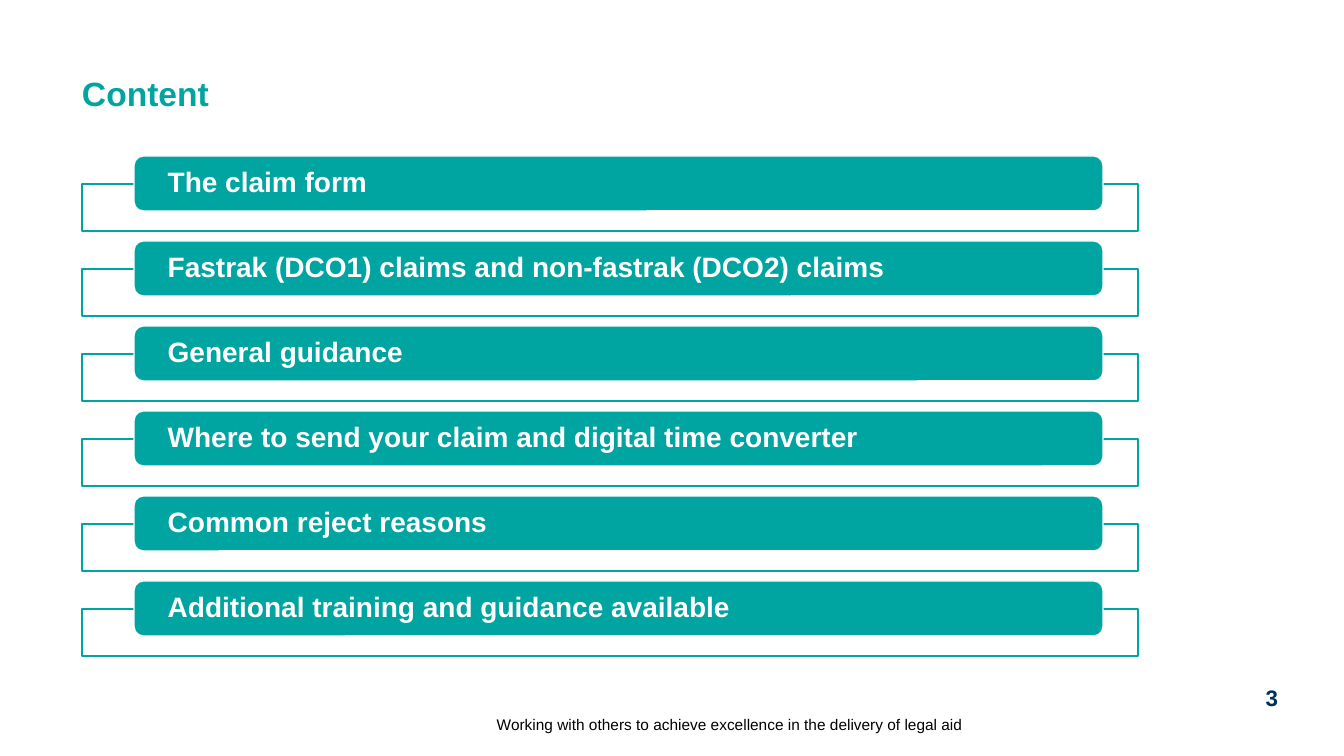
from dataclasses import dataclass

from lxml.etree import SubElement
from pptx import Presentation
from pptx.dml.color import RGBColor
from pptx.enum.shapes import MSO_SHAPE as Preset
from pptx.enum.text import MSO_ANCHOR as Anchor, MSO_AUTO_SIZE as AutoSize, PP_ALIGN as Align
from pptx.oxml.ns import qn
from pptx.shapes.autoshape import Shape
from pptx.slide import Slide
from pptx.util import Emu, Pt

EMU_PER_PX = 914400 / 100.8
TITLE_ONLY = 5


@dataclass(frozen=True)
class Theme:
    font: str = "Arial"
    teal: RGBColor = RGBColor(0x00, 0xA5, 0xA1)
    navy: RGBColor = RGBColor(0x00, 0x30, 0x57)
    white: RGBColor = RGBColor(0xFF, 0xFF, 0xFF)
    black: RGBColor = RGBColor(0x00, 0x00, 0x00)
    title_size: int = 24
    topic_size: int = 20
    number_size: int = 16
    footer_size: int = 11
    line_width: int = 1
    frame_opacity: int = 90


@dataclass(frozen=True)
class Box:
    left: int
    top: int
    width: int
    height: int

    def lowered(self, distance: int) -> "Box":
        return Box(self.left, self.top + distance, self.width, self.height)

    def emu(self) -> tuple[Emu, Emu, Emu, Emu]:
        return px(self.left), px(self.top), px(self.width), px(self.height)


@dataclass(frozen=True)
class TextStyle:
    size: int
    color: RGBColor
    bold: bool = True
    align: Align = Align.LEFT
    anchor: Anchor = Anchor.TOP
    side_margin: int = 0
    line_spacing: float = 1.0


THEME = Theme()
TITLE_STYLE = TextStyle(THEME.title_size, THEME.teal, line_spacing=0.9)
TOPIC_STYLE = TextStyle(THEME.topic_size, THEME.white, anchor=Anchor.MIDDLE,
                        side_margin=31, line_spacing=0.9)
FOOTER_STYLE = TextStyle(THEME.footer_size, THEME.black, bold=False,
                         align=Align.RIGHT, anchor=Anchor.BOTTOM)
NUMBER_STYLE = TextStyle(THEME.number_size, THEME.navy, align=Align.CENTER)

TITLE_BOX = Box(82, 77, 851, 38)
FOOTER_BOX = Box(212, 698, 751, 36)
NUMBER_BOX = Box(1257, 684, 30, 28)
FRAME_BOX = Box(82, 184, 1056, 47)
BAR_BOX = Box(134, 156, 969, 55)
TOPIC_PITCH = 85

TOPICS = (
    "The claim form",
    "Fastrak (DCO1) claims and non-fastrak (DCO2) claims",
    "General guidance",
    "Where to send your claim and digital time converter",
    "Common reject reasons",
    "Additional training and guidance available",
)


def px(length: int) -> Emu:
    return Emu(round(length * EMU_PER_PX))


def write_text(shape: Shape, text: str, style: TextStyle) -> None:
    frame = shape.text_frame
    frame_format = {
        "word_wrap": True, "auto_size": AutoSize.NONE, "vertical_anchor": style.anchor,
        "margin_left": px(style.side_margin), "margin_right": px(style.side_margin),
        "margin_top": 0, "margin_bottom": 0,
    }
    for name, value in frame_format.items():
        setattr(frame, name, value)
    paragraph = frame.paragraphs[0]
    paragraph.alignment = style.align
    paragraph.line_spacing = style.line_spacing
    run = paragraph.add_run()
    run.text = text
    font_format = {"name": THEME.font, "size": Pt(style.size), "bold": style.bold}
    for name, value in font_format.items():
        setattr(run.font, name, value)
    run.font.color.rgb = style.color


def add_title(slide: Slide, text: str) -> None:
    title = slide.shapes.title
    title.left, title.top, title.width, title.height = TITLE_BOX.emu()
    write_text(title, text, TITLE_STYLE)


def add_label(slide: Slide, box: Box, text: str, style: TextStyle) -> None:
    write_text(slide.shapes.add_textbox(*box.emu()), text, style)


def add_panel(slide: Slide, preset: Preset, box: Box, fill: RGBColor, line: RGBColor) -> Shape:
    panel = slide.shapes.add_shape(preset, *box.emu())
    panel.shadow.inherit = False
    panel.fill.solid()
    panel.fill.fore_color.rgb = fill
    panel.line.color.rgb = line
    panel.line.width = Pt(THEME.line_width)
    return panel


def set_fill_opacity(shape: Shape, percent: int) -> None:
    color = shape.element.spPr.find(qn("a:solidFill")).find(qn("a:srgbClr"))
    SubElement(color, qn("a:alpha")).set("val", str(percent * 1000))


def add_topic(slide: Slide, index: int, text: str) -> None:
    """Add a bar holding the topic, in front of its outlined frame."""
    offset = index * TOPIC_PITCH
    frame = add_panel(slide, Preset.RECTANGLE, FRAME_BOX.lowered(offset), THEME.white, THEME.teal)
    set_fill_opacity(frame, THEME.frame_opacity)
    bar = add_panel(slide, Preset.ROUNDED_RECTANGLE, BAR_BOX.lowered(offset),
                    THEME.teal, THEME.white)
    write_text(bar, text, TOPIC_STYLE)


def main() -> None:
    presentation = Presentation()
    presentation.slide_width, presentation.slide_height = px(1344), px(756)
    slide = presentation.slides.add_slide(presentation.slide_layouts[TITLE_ONLY])
    add_title(slide, "Content")
    for index, topic in enumerate(TOPICS):
        add_topic(slide, index, topic)
    add_label(slide, FOOTER_BOX,
              "Working with others to achieve excellence in the delivery of legal aid", FOOTER_STYLE)
    add_label(slide, NUMBER_BOX, "3", NUMBER_STYLE)
    presentation.save("out.pptx")


if __name__ == "__main__":
    main()
